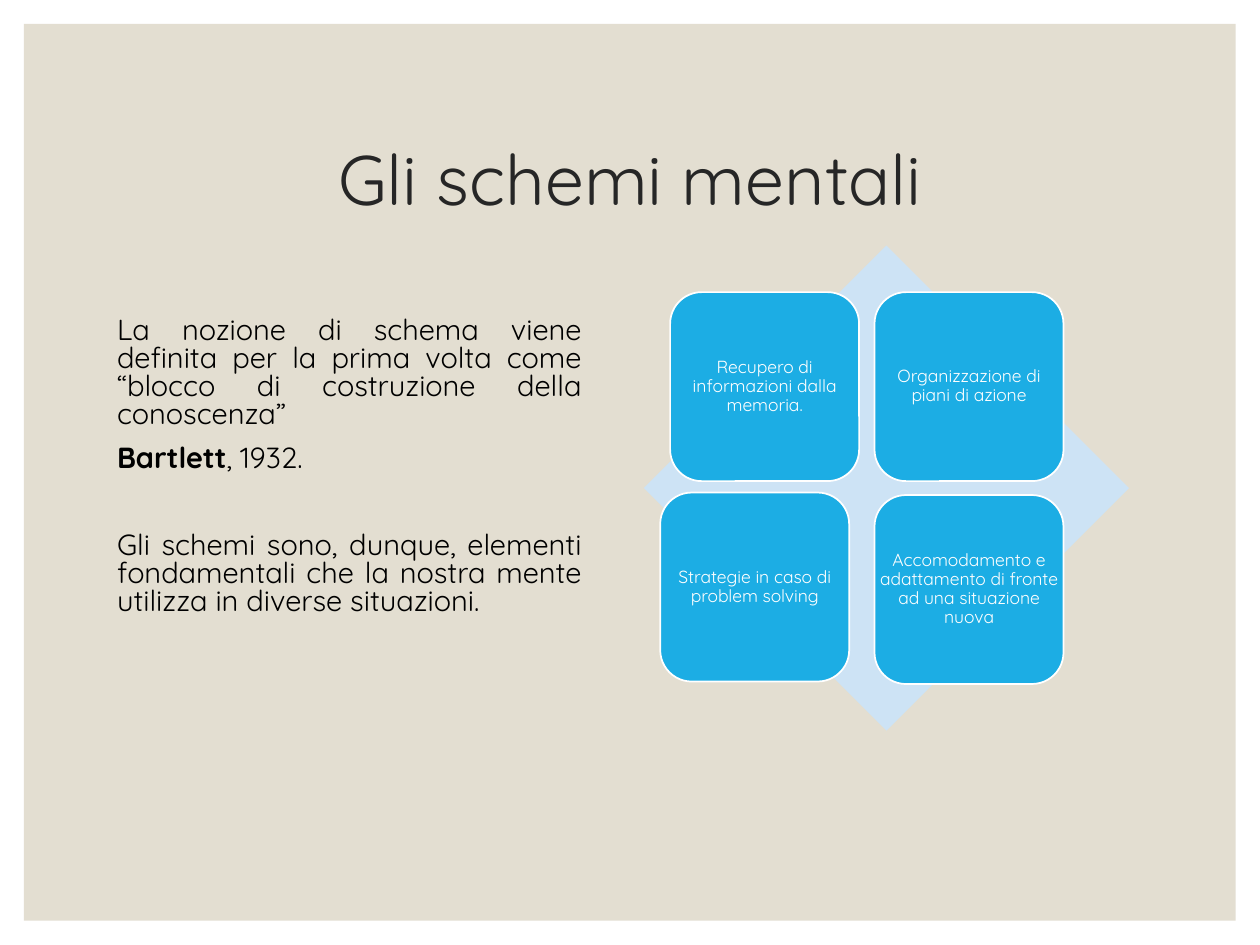
from dataclasses import dataclass

import pptx
import pptx.dml.color
import pptx.enum.shapes
import pptx.enum.text
import pptx.util
from pptx.util import Cm

FONT = "Quicksand"
SAND, PALE_BLUE, BLUE = "E3DED1", "CDE3F5", "1CADE4"
WHITE, BLACK, CHARCOAL = "FFFFFF", "000000", "262626"
TILE_SIZE = 3.81

Align = pptx.enum.text.PP_ALIGN
Anchor = pptx.enum.text.MSO_ANCHOR
Preset = pptx.enum.shapes.MSO_SHAPE


@dataclass
class Box:
    """Position and size in centimetres."""
    left: float
    top: float
    width: float
    height: float

    def lengths(self) -> list:
        return [Cm(value) for value in (self.left, self.top, self.width, self.height)]


@dataclass
class Run:
    text: str
    bold: bool = False


@dataclass
class Paragraph:
    runs: list[Run]
    space_before: float = 0


@dataclass
class TextStyle:
    size: float
    color: str
    alignment: Align
    line_spacing: float


@dataclass
class Tile:
    left: float
    top: float
    text: str


TITLE_STYLE = TextStyle(40, CHARCOAL, Align.CENTER, 0.9)
BODY_STYLE = TextStyle(16.6, BLACK, Align.JUSTIFY, 0.8)
TILE_STYLE = TextStyle(10, WHITE, Align.CENTER, 0.9)

BODY = [
    Paragraph([Run("La nozione di schema viene definita per la prima volta come "
                   "“blocco di costruzione della conoscenza”")]),
    Paragraph([Run("Bartlett", bold=True), Run(", 1932.")], space_before=9),
    Paragraph([Run("Gli schemi sono, dunque, elementi fondamentali che la nostra "
                   "mente utilizza in diverse situazioni.")], space_before=34),
]

TILES = [
    Tile(13.51, 5.89, "Recupero di informazioni dalla memoria."),
    Tile(17.63, 5.89, "Organizzazione di piani di azione"),
    Tile(13.31, 9.93, "Strategie in caso di problem solving"),
    Tile(17.63, 9.98, "Accomodamento e adattamento di fronte ad una situazione nuova"),
]


def rgb(color: str) -> pptx.dml.color.RGBColor:
    return pptx.dml.color.RGBColor.from_string(color)


def write_text(frame, paragraphs: list[Paragraph], style: TextStyle, anchor: Anchor) -> None:
    frame.word_wrap = True
    frame.vertical_anchor = anchor
    for index, content in enumerate(paragraphs):
        paragraph = frame.add_paragraph() if index else frame.paragraphs[0]
        paragraph.alignment = style.alignment
        paragraph.line_spacing = style.line_spacing
        paragraph.space_before = pptx.util.Pt(content.space_before)
        for part in content.runs:
            run = paragraph.add_run()
            run.text = part.text
            run.font.name = FONT
            run.font.size = pptx.util.Pt(style.size)
            run.font.bold = part.bold
            run.font.color.rgb = rgb(style.color)


def add_text(slide, box: Box, paragraphs: list[Paragraph], style: TextStyle,
             anchor: Anchor) -> None:
    write_text(slide.shapes.add_textbox(*box.lengths()).text_frame, paragraphs, style, anchor)


def add_filled_shape(slide, preset: Preset, box: Box, color: str):
    """Add a flat shape without outline."""
    shape = slide.shapes.add_shape(preset, *box.lengths())
    shape.shadow.inherit = False
    shape.fill.solid()
    shape.fill.fore_color.rgb = rgb(color)
    shape.line.fill.background()
    return shape


def add_tile(slide, tile: Tile) -> None:
    box = Box(tile.left, tile.top, TILE_SIZE, TILE_SIZE)
    shape = add_filled_shape(slide, Preset.ROUNDED_RECTANGLE, box, BLUE)
    shape.line.color.rgb = rgb(WHITE)
    shape.line.width = pptx.util.Pt(1)
    frame = shape.text_frame
    frame.margin_left = frame.margin_right = Cm(0.1)
    frame.margin_top = frame.margin_bottom = Cm(0.1)
    # The tile's rounded corners would narrow the text, so it has its own box.
    label = slide.shapes.add_textbox(*box.lengths()).text_frame
    label.margin_left = label.margin_right = Cm(0.1)
    label.margin_top = label.margin_bottom = Cm(0.1)
    write_text(label, [Paragraph([Run(tile.text)])], TILE_STYLE, Anchor.MIDDLE)


def main() -> None:
    presentation = pptx.Presentation()
    presentation.slide_width = Cm(25.4)
    presentation.slide_height = Cm(19.05)
    slide = presentation.slides.add_slide(presentation.slide_layouts[6])

    add_filled_shape(slide, Preset.RECTANGLE, Box(0.48, 0.48, 24.43, 18.08), SAND)
    add_text(slide, Box(2.03, 1.78, 21.34, 3.81),
             [Paragraph([Run("Gli schemi mentali")])], TITLE_STYLE, Anchor.MIDDLE)
    add_text(slide, Box(2.11, 6.3, 9.86, 7.47), BODY, BODY_STYLE, Anchor.TOP)
    add_filled_shape(slide, Preset.DIAMOND, Box(12.98, 4.95, 9.78, 9.78), PALE_BLUE)
    for tile in TILES:
        add_tile(slide, tile)

    presentation.save("out.pptx")


if __name__ == "__main__":
    main()
